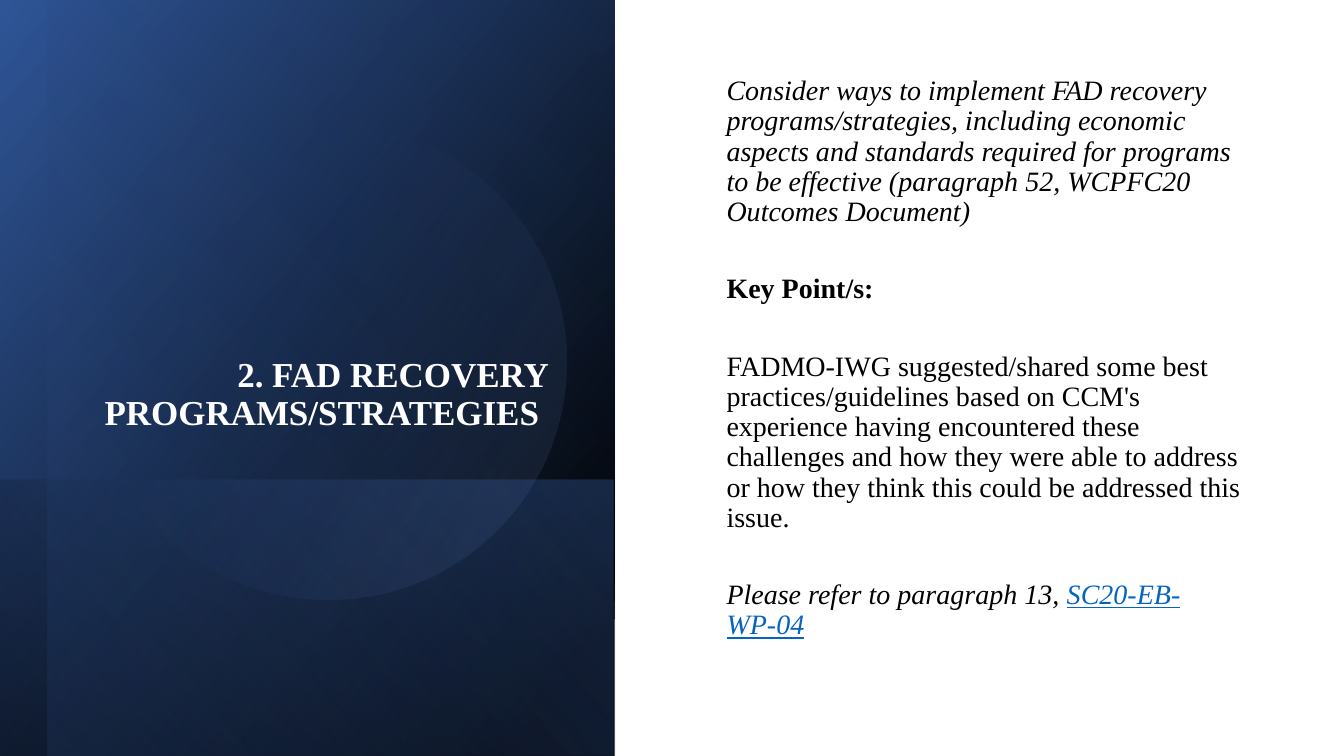
import pptx
import pptx.util
import pptx.dml.color
import pptx.enum.shapes
import pptx.enum.text
import pptx.oxml
import pptx.oxml.ns
from dataclasses import dataclass, field

Cm, Pt = pptx.util.Cm, pptx.util.Pt
RGB = pptx.dml.color.RGBColor
SHAPE = pptx.enum.shapes.MSO_SHAPE
ALIGN = pptx.enum.text.PP_ALIGN
ANCHOR = pptx.enum.text.MSO_ANCHOR


@dataclass(frozen=True)
class Theme:
    font: str = "Times New Roman"
    title_size: float = 25
    body_size: float = 20
    line_spacing: float = 0.9
    paragraph_gap: float = 33.6
    black: str = "000000"
    white: str = "FFFFFF"
    navy: str = "2F5597"
    blue: str = "4472C4"
    pale: str = "8FAADC"
    link: str = "0563C1"


THEME = Theme()


@dataclass(frozen=True)
class Stop:
    pos: int
    color: str
    alpha: int = 100


@dataclass(frozen=True)
class Panel:
    """A gradient shape; box is left, top, width, height in cm."""
    box: tuple[float, float, float, float]
    angle: int
    stops: tuple[Stop, Stop]
    kind: int = SHAPE.RECTANGLE
    rotation: float = 90
    flipped: bool = True


@dataclass(frozen=True)
class Run:
    text: str
    color: str = THEME.black
    size: float = THEME.body_size
    style: dict[str, bool] = field(default_factory=dict)


# Left-hand backdrop, from back to front
PANELS = [
    Panel((-1.78, 1.78, 19.05, 15.49), 50,
          (Stop(8, THEME.black), Stop(100, THEME.navy))),
    Panel((4.24, 7.82, 6.96, 15.49), 130,
          (Stop(2, THEME.blue, 29), Stop(100, THEME.black, 30))),
    Panel((-1.17, 2.36, 19.05, 14.3), 130,
          (Stop(0, THEME.black, 0), Stop(99, THEME.blue, 11))),
    Panel((2.29, 3.12, 11.99, 11.99), 290,
          (Stop(39, THEME.blue, 0), Stop(100, THEME.pale, 15)),
          SHAPE.OVAL, 101.6, False),
]

TITLE = [[Run("2. FAD RECOVERY PROGRAMS/STRATEGIES ", THEME.white,
              THEME.title_size, {"bold": True})]]

BODY = [
    [Run("Consider ways to implement FAD recovery programs/strategies, "
         "including economic aspects and standards required for programs "
         "to be effective (paragraph 52, WCPFC20 Outcomes Document)",
         style={"italic": True})],
    [Run("Key Point/s:", style={"bold": True})],
    [Run("FADMO-IWG suggested/shared some best practices/guidelines based on "
         "CCM's experience having encountered these challenges and how they "
         "were able to address or how they think this could be addressed "
         "this issue.")],
    [Run("Please refer to paragraph 13, ", style={"italic": True}),
     Run("SC20-EB-WP-04", THEME.link,
         style={"italic": True, "underline": True})],
]


def add_panel(slide: pptx.slide.Slide, panel: Panel) -> None:
    sp = slide.shapes.add_shape(panel.kind, *map(Cm, panel.box))
    sp.rotation = panel.rotation
    sp.shadow.inherit = False
    sp.line.fill.background()
    sp_pr = sp._element.spPr
    if panel.flipped:
        sp_pr.xfrm.set("flipH", "1")
    # Gradient with transparent stops
    stops = "".join(
        f'<a:gs pos="{s.pos * 1000}"><a:srgbClr val="{s.color}">'
        f'<a:alpha val="{s.alpha * 1000}"/></a:srgbClr></a:gs>'
        for s in panel.stops)
    grad = pptx.oxml.parse_xml(
        f'<a:gradFill {pptx.oxml.ns.nsdecls("a")} rotWithShape="1">'
        f'<a:gsLst>{stops}</a:gsLst>'
        f'<a:lin ang="{panel.angle * 60000}" scaled="0"/></a:gradFill>')
    sp_pr.find(pptx.oxml.ns.qn("a:prstGeom")).addnext(grad)


def add_text(slide: pptx.slide.Slide, box: tuple[float, float, float, float],
             paragraphs: list[list[Run]], anchor: int, align: int) -> None:
    tf = slide.shapes.add_textbox(*map(Cm, box)).text_frame
    tf.word_wrap = True
    tf.vertical_anchor = anchor
    for i, runs in enumerate(paragraphs):
        p = tf.add_paragraph() if i else tf.paragraphs[0]
        layout = {"alignment": align, "line_spacing": THEME.line_spacing,
                  "space_before": Pt(THEME.paragraph_gap if i else 0)}
        for name, value in layout.items():
            setattr(p, name, value)
        for run in runs:
            r = p.add_run()
            r.text = run.text
            r.font.color.rgb = RGB.from_string(run.color)
            look = {"name": THEME.font, "size": Pt(run.size), **run.style}
            for name, value in look.items():
                setattr(r.font, name, value)


def main() -> None:
    prs = pptx.Presentation()
    prs.slide_width, prs.slide_height = Cm(33.87), Cm(19.05)
    slide = prs.slides.add_slide(prs.slide_layouts[6])
    for panel in PANELS:
        add_panel(slide, panel)
    # Title on the backdrop, body text on the white half
    add_text(slide, (2.29, 1.63, 11.76, 9.4), TITLE, ANCHOR.BOTTOM, ALIGN.RIGHT)
    add_text(slide, (18.06, 1.8, 13.51, 15.42), BODY, ANCHOR.TOP, ALIGN.LEFT)
    prs.save("out.pptx")


if __name__ == "__main__":
    main()
